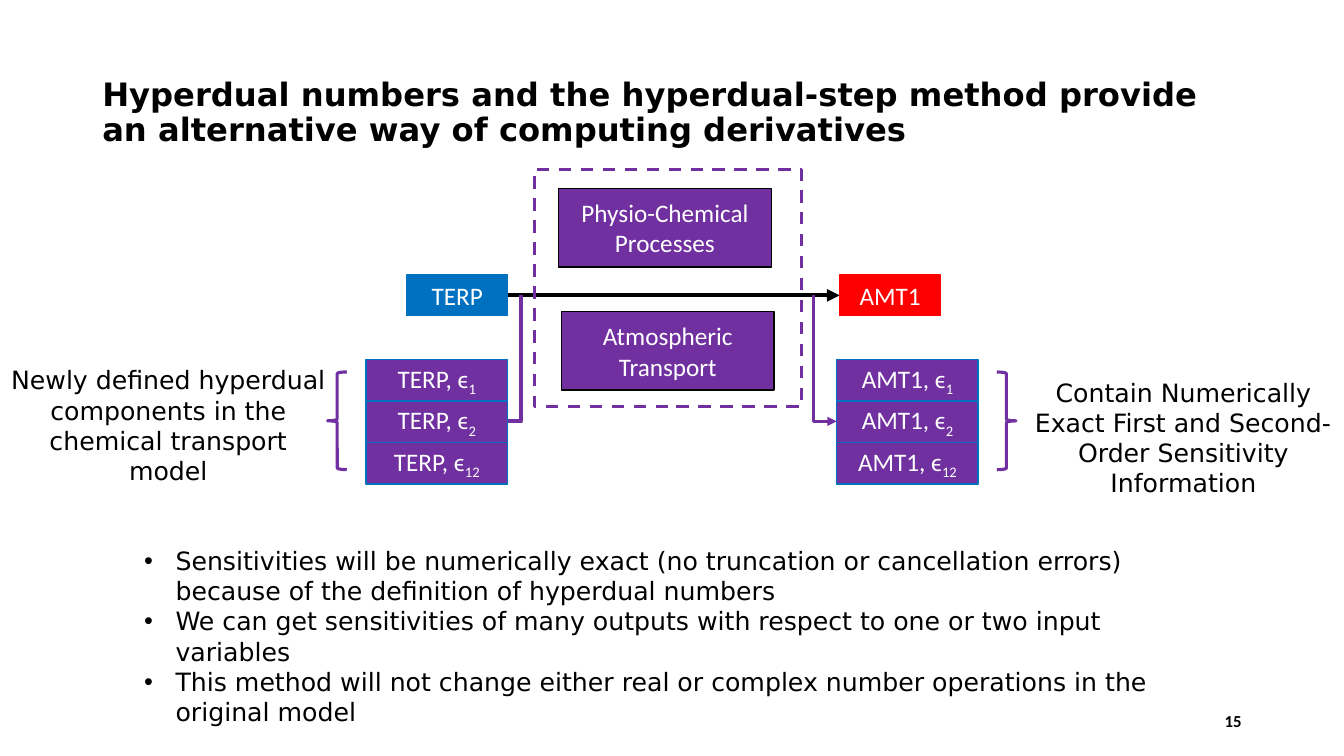
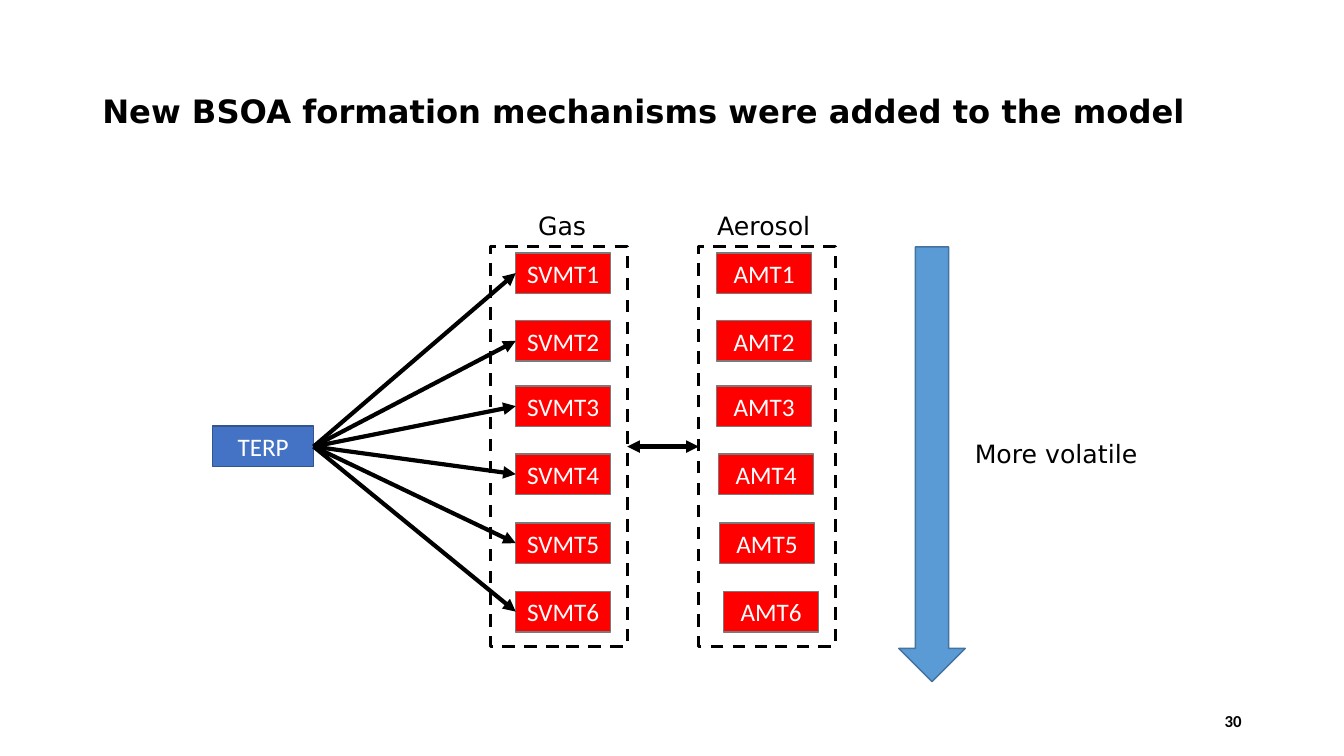
from pptx import Presentation
from pptx.dml.color import RGBColor
from pptx.enum.dml import MSO_LINE
from pptx.enum.shapes import MSO_CONNECTOR, MSO_SHAPE
from pptx.enum.text import MSO_ANCHOR, PP_ALIGN
from pptx.oxml.ns import qn
from pptx.oxml.xmlchemy import OxmlElement
from pptx.util import Pt

BLACK = RGBColor(0x00, 0x00, 0x00)
WHITE = RGBColor(0xFF, 0xFF, 0xFF)
RED = RGBColor(0xFF, 0x00, 0x00)
PURPLE = RGBColor(0x70, 0x30, 0xA0)
BLUE = RGBColor(0x00, 0x70, 0xC0)
ROYAL = RGBColor(0x44, 0x72, 0xC4)
NAVY = RGBColor(0x32, 0x54, 0x91)
SKY = RGBColor(0x5B, 0x9B, 0xD5)
STEEL = RGBColor(0x43, 0x73, 0x9E)
GREY = RGBColor(0x7A, 0x7A, 0x7A)

HEAD, BODY = "DejaVu Sans", "Calibri"
LEFT, MID, RIGHT = PP_ALIGN.LEFT, PP_ALIGN.CENTER, PP_ALIGN.RIGHT


def add_run(para, text, size, font, color, bold=False, sub=False):
    run = para.add_run()
    run.text = text
    run.font.size, run.font.name, run.font.bold = Pt(size), font, bold
    run.font.color.rgb = color
    if sub:
        run.font._element.set("baseline", "-25000")


def add_text(slide, spot, lines, size=18, font=HEAD, bold=False,
             align=LEFT, anchor=MSO_ANCHOR.TOP):
    frame = slide.shapes.add_textbox(*map(Pt, spot)).text_frame
    frame.word_wrap = True
    frame.vertical_anchor = anchor
    for i, line in enumerate(lines):
        para = frame.add_paragraph() if i else frame.paragraphs[0]
        para.alignment = align
        add_run(para, line, size, font, BLACK, bold)
    return frame


def add_list(slide, spot, lines):
    for para in add_text(slide, spot, lines).paragraphs:
        props = para._p.get_or_add_pPr()
        props.set("marL", str(Pt(22.5)))
        props.set("indent", str(-Pt(22.5)))
        font = OxmlElement("a:buFont")
        font.set("typeface", "Arial")
        mark = OxmlElement("a:buChar")
        mark.set("char", "•")
        props.extend([font, mark])


def add_form(slide, kind, spot, fill, line, width=1, dash=False):
    shape = slide.shapes.add_shape(kind, *map(Pt, spot))
    shape.shadow.inherit = False
    if fill is None:
        shape.fill.background()
    else:
        shape.fill.solid()
        shape.fill.fore_color.rgb = fill
    shape.line.color.rgb = line
    shape.line.width = Pt(width)
    if dash:
        shape.line.dash_style = MSO_LINE.DASH
    return shape


def add_box(slide, spot, text, fill, line, sub=""):
    shape = add_form(slide, MSO_SHAPE.RECTANGLE, spot, fill, line)
    frame = shape.text_frame
    frame.word_wrap = True
    frame.vertical_anchor = MSO_ANCHOR.MIDDLE
    para = frame.paragraphs[0]
    para.alignment = MID
    add_run(para, text, 18, BODY, WHITE)
    if sub:
        add_run(para, sub, 18, BODY, WHITE, sub=True)


def add_frame(slide, spot, color):
    add_form(slide, MSO_SHAPE.RECTANGLE, spot, None, color, 2.25, dash=True)


def add_brace(slide, left, turn=0):
    spot = (left, 265.7, 13.7, 69.8)
    add_form(slide, MSO_SHAPE.LEFT_BRACE, spot, None, PURPLE, 2.25).rotation = turn


def add_line(slide, start, end, color=BLACK, width=3, tips=("tailEnd",), bent=False):
    kind = MSO_CONNECTOR.ELBOW if bent else MSO_CONNECTOR.STRAIGHT
    link = slide.shapes.add_connector(kind, *map(Pt, start + end))
    link.line.color.rgb = color
    link.line.width = Pt(width)
    props = link._element.spPr
    if bent:  # a single corner
        props.find(qn("a:prstGeom")).set("prst", "bentConnector2")
    for tip in tips:
        arrow = OxmlElement("a:" + tip)
        arrow.set("type", "triangle")
        props.find(qn("a:ln")).append(arrow)
    props.append(OxmlElement("a:effectLst"))


def add_slide(deck, title, page):
    slide = deck.slides.add_slide(deck.slide_layouts[6])
    frame = add_text(slide, (66, 28.75, 828, 104.4), [title], 23, bold=True,
                     anchor=MSO_ANCHOR.MIDDLE)
    frame.paragraphs[0].line_spacing = 0.9
    add_text(slide, (678, 500.5, 216, 28.75), [page], 12, BODY, True,
             RIGHT, MSO_ANCHOR.MIDDLE)
    return slide


def add_stack(slide, left, name):
    for i, sub in enumerate(("1", "2", "12")):
        spot = (left, 257 + 29.6 * i, 101, 29.6)
        add_box(slide, spot, name + ", ϵ", PURPLE, BLUE, sub)


def draw_step(deck):
    slide = add_slide(deck, "Hyperdual numbers and the hyperdual-step method provide "
                      "an alternative way of computing derivatives", "15")
    # Main path through the model
    add_box(slide, (290.4, 196.4, 72.3, 29.1), "TERP", BLUE, BLUE)
    add_line(slide, (362.7, 211), (599.7, 211))
    add_frame(slide, (381.8, 121, 190.8, 169.4), PURPLE)
    add_box(slide, (399, 134.6, 152, 56.2), "Physio-Chemical Processes", PURPLE, BLACK)
    add_box(slide, (401, 222.5, 152, 56.2), "Atmospheric Transport", PURPLE, BLACK)
    add_box(slide, (599.7, 196.4, 72.3, 29.1), "AMT1", RED, RED)

    # Hyperdual parts, in and out
    add_stack(slide, 261.5, "TERP")
    add_brace(slide, 234)
    add_text(slide, (0.7, 257, 239, 94.3),
             ["Newly defined hyperdual components in the chemical transport model"],
             align=MID)
    add_line(slide, (362.7, 301), (372.2, 211), PURPLE, tips=(), bent=True)
    add_stack(slide, 597.7, "AMT1")
    add_line(slide, (597.7, 301), (581, 211), PURPLE, 2.25, ("headEnd",), bent=True)
    add_brace(slide, 712, 180)
    add_text(slide, (725.8, 265.7, 239, 94.3),
             ["Contain Numerically Exact First and Second-Order Sensitivity Information"],
             align=MID)

    # Gains
    add_list(slide, (95.8, 386, 771, 138), [
        "Sensitivities will be numerically exact (no truncation or cancellation errors) "
        "because of the definition of hyperdual numbers",
        "We can get sensitivities of many outputs with respect to one or two input variables",
        "This method will not change either real or complex number operations in the "
        "original model",
    ])


def draw_paths(deck):
    slide = add_slide(deck, "New BSOA formation mechanisms were added to the model", "30")
    # Source, gas and aerosol species
    add_box(slide, (152, 304.4, 72, 29), "TERP", ROYAL, NAVY)
    tops = (180.6, 229, 275.6, 324.2, 373.5, 422.4)
    lefts = (512, 512, 512, 513.4, 514, 517)
    for i, (top, left) in enumerate(zip(tops, lefts), 1):
        add_box(slide, (368.4, top, 67.8, 29), f"SVMT{i}", RED, GREY)
        add_line(slide, (224, 319), (368.4, top + 14.5))
        add_box(slide, (left, top, 67.8, 29), f"AMT{i}", RED, GREY)

    # Volatility scale
    add_form(slide, MSO_SHAPE.DOWN_ARROW, (642, 176.4, 47.5, 310.5), SKY, STEEL)
    add_text(slide, (689.2, 309.6, 181, 29), ["More volatile"])

    # Phases and the exchange between them
    add_text(slide, (377.2, 146.7, 58.3, 29), ["Gas"])
    add_text(slide, (505.2, 146.7, 91.4, 29), ["Aerosol"])
    for left in (350.4, 499.2):
        add_frame(slide, (left, 176, 97.6, 285.8), BLACK)
    add_line(slide, (448, 319), (499.2, 319), tips=("headEnd", "tailEnd"))


def main():
    deck = Presentation()
    deck.slide_width, deck.slide_height = Pt(960), Pt(540)
    draw_step(deck)
    draw_paths(deck)
    deck.save("out.pptx")


if __name__ == "__main__":
    main()
